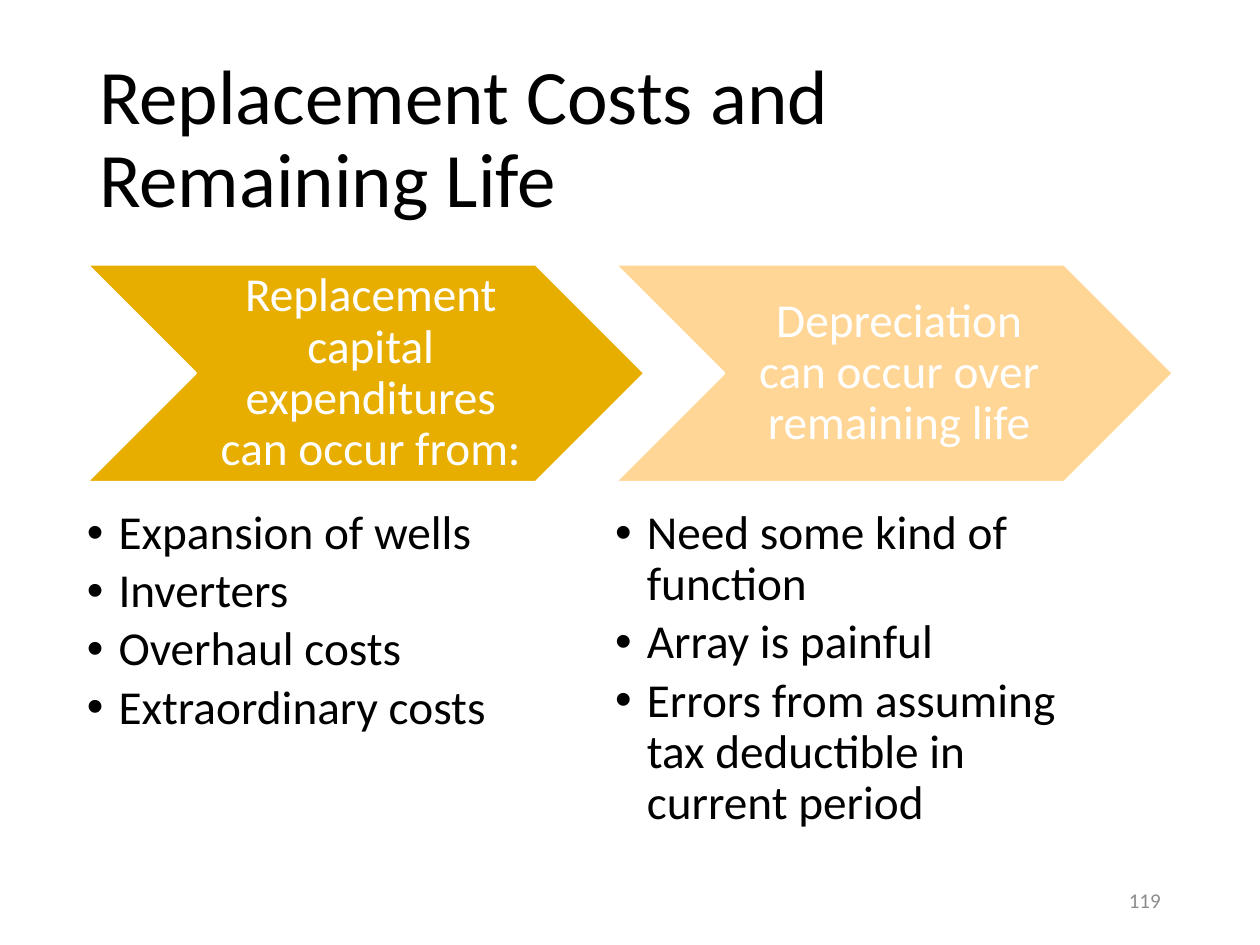
from dataclasses import dataclass

from lxml import etree
from pptx import Presentation
from pptx import util as u
from pptx.dml.color import RGBColor
from pptx.enum import shapes, text
from pptx.oxml import ns

FONT = "Calibri"
BLACK, WHITE, GRAY = "000000", "FFFFFF", "8C8C8C"
LEFT, COLUMN_STEP = 1.75, 10.65
CHEVRON_TOP, CHEVRON_HEIGHT = 5.33, 4.39
BULLET_INDENT = 0.64


@dataclass(frozen=True)
class Box:
    left: float
    top: float
    width: float
    height: float


@dataclass(frozen=True)
class Style:
    size: float
    color: str
    alignment: text.PP_ALIGN = text.PP_ALIGN.LEFT
    anchor: text.MSO_ANCHOR = text.MSO_ANCHOR.MIDDLE
    margins: tuple[float, float, float, float] = (0.25, 0.13, 0.25, 0.13)
    line_spacing: float = 0.9
    space_after: float = 0
    bulleted: bool = False


@dataclass(frozen=True)
class Column:
    heading: str
    fill: str
    points: tuple[str, ...]


TITLE = Style(44, BLACK)
HEADING = Style(27, WHITE, text.PP_ALIGN.CENTER, margins=(0.3, 0.1, 0.1, 0.1))
POINTS = Style(27, BLACK, anchor=text.MSO_ANCHOR.TOP, margins=(0, 0, 0, 0),
               space_after=4, bulleted=True)
NUMBER = Style(12, GRAY, text.PP_ALIGN.RIGHT, line_spacing=1)

COLUMNS = (
    Column("Replacement capital expenditures can occur from:", "E7AE00",
           ("Expansion of wells", "Inverters", "Overhaul costs",
            "Extraordinary costs")),
    Column("Depreciation can occur over remaining life", "FFD695",
           ("Need some kind of function", "Array is painful",
            "Errors from assuming tax deductible in current period")),
)


def color(value: str) -> RGBColor:
    return RGBColor.from_string(value)


def place(box: Box) -> tuple[u.Length, ...]:
    return u.Cm(box.left), u.Cm(box.top), u.Cm(box.width), u.Cm(box.height)


def add_bullet(paragraph) -> None:
    properties = paragraph._p.get_or_add_pPr()
    properties.set("marL", str(u.Cm(BULLET_INDENT)))
    properties.set("indent", str(-u.Cm(BULLET_INDENT)))
    font = etree.SubElement(properties, ns.qn("a:buFont"))
    font.set("typeface", "Arial")
    bullet = etree.SubElement(properties, ns.qn("a:buChar"))
    bullet.set("char", "•")


def add_text(slide, box: Box, style: Style, *lines: str) -> None:
    frame = slide.shapes.add_textbox(*place(box)).text_frame
    frame.word_wrap = True
    frame.vertical_anchor = style.anchor
    (frame.margin_left, frame.margin_top,
     frame.margin_right, frame.margin_bottom) = map(u.Cm, style.margins)
    for index, line in enumerate(lines):
        paragraph = frame.add_paragraph() if index else frame.paragraphs[0]
        if style.bulleted:
            add_bullet(paragraph)
        paragraph.alignment = style.alignment
        paragraph.line_spacing = style.line_spacing
        paragraph.space_after = u.Pt(style.space_after)
        run = paragraph.add_run()
        run.text = line
        run.font.name = FONT
        run.font.size = u.Pt(style.size)
        run.font.color.rgb = color(style.color)


def add_chevron(slide, box: Box, fill: str) -> None:
    shape = slide.shapes.add_shape(shapes.MSO_SHAPE.CHEVRON, *place(box))
    shape.shadow.inherit = False
    shape.fill.solid()
    shape.fill.fore_color.rgb = color(fill)
    shape.line.color.rgb = color(WHITE)
    shape.line.width = u.Pt(1.5)


def add_column(slide, left: float, column: Column) -> None:
    add_chevron(slide, Box(left, CHEVRON_TOP, 11.25, CHEVRON_HEIGHT), column.fill)
    add_text(slide, Box(left + CHEVRON_HEIGHT / 2, CHEVRON_TOP, 6.86, CHEVRON_HEIGHT),
             HEADING, column.heading)
    add_text(slide, Box(left, 10.26, 8.99, 6.65), POINTS, *column.points)


def main() -> None:
    presentation = Presentation()
    presentation.slide_width, presentation.slide_height = u.Cm(25.4), u.Cm(19.05)
    slide = presentation.slides.add_slide(presentation.slide_layouts[6])
    for index, column in enumerate(COLUMNS):
        add_column(slide, LEFT + index * COLUMN_STEP, column)
    add_text(slide, Box(LEFT, 1.01, 21.9, 3.68), TITLE,
             "Replacement Costs and Remaining Life")
    add_text(slide, Box(17.93, 17.65, 5.72, 1.01), NUMBER, "119")
    presentation.save("out.pptx")


if __name__ == "__main__":
    main()
